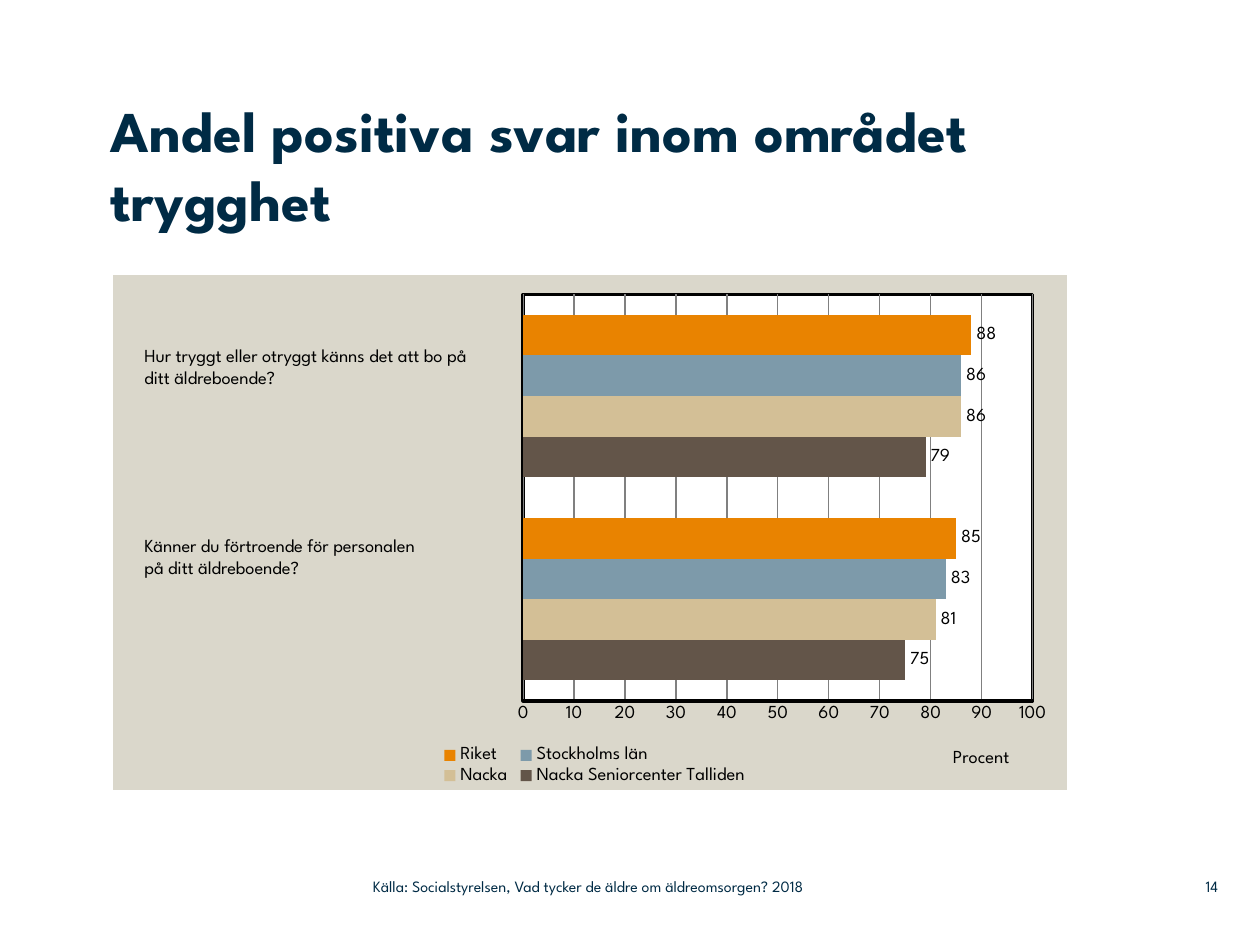
from lxml import etree
from pptx import Presentation
from pptx.chart.data import CategoryChartData
from pptx.dml.color import RGBColor
from pptx.enum.chart import XL_CHART_TYPE as ChartType
from pptx.enum.chart import XL_LABEL_POSITION as LabelPos
from pptx.enum.chart import XL_LEGEND_POSITION as LegendPos
from pptx.enum.chart import XL_TICK_MARK as TickMark
from pptx.enum.text import MSO_ANCHOR as Anchor
from pptx.enum.text import PP_ALIGN as Align
from pptx.oxml import parse_xml
from pptx.oxml.ns import nsdecls, qn
from pptx.util import Emu, Pt

FONT = "League Spartan"
COLORS = {
    "navy": "002B45", "black": "000000", "white": "FFFFFF", "panel": "DAD7CB", "grid": "808080",
    "brown": "635549", "sand": "D3BF96", "blue": "7D9AAA", "orange": "E98300",
}
SERIES = [
    ("Nacka Seniorcenter Talliden", (75, 79), "brown"),
    ("Nacka", (81, 86), "sand"),
    ("Stockholms län", (83, 86), "blue"),
    ("Riket", (85, 88), "orange"),
]


def px(length):
    return Emu(round(length * 914400 / 126))


def rgb(name):
    return RGBColor.from_string(COLORS[name])


def place(part, index, x, y, w=None, h=None, inner=False):
    for old in part.findall(qn("c:layout")):
        part.remove(old)
    layout = parse_xml(f"<c:layout {nsdecls('c')}><c:manualLayout/></c:layout>")
    settings = [("layoutTarget", "inner")] if inner else []
    settings += [("xMode", "edge"), ("yMode", "edge"), ("x", x), ("y", y)]
    settings += [(tag, size) for tag, size in (("w", w), ("h", h)) if size]
    for tag, value in settings:
        etree.SubElement(layout[0], qn(f"c:{tag}")).set("val", str(value))
    part.insert(index, layout)


def area_format(fill, line=None, width=0):
    stroke = f'<a:solidFill><a:srgbClr val="{COLORS[line]}"/></a:solidFill>' if line else "<a:noFill/>"
    return parse_xml(
        f'<c:spPr {nsdecls("c", "a")}><a:solidFill><a:srgbClr val="{COLORS[fill]}"/></a:solidFill>'
        f'<a:ln w="{Pt(width)}">{stroke}</a:ln></c:spPr>'
    )


class SlideBuilder:
    """Holds the style and the current slide, and adds each kind of element."""

    def __init__(self, slide):
        self.slide = slide

    def style(self, font, size, color="black", bold=False):
        font.name, font.size, font.bold = FONT, Pt(size), bold
        font.color.rgb = rgb(color)

    def text(self, box, lines, size, color="black", bold=False, align=Align.LEFT, anchor=Anchor.TOP, inset=True):
        frame = self.slide.shapes.add_textbox(*map(px, box)).text_frame
        frame.word_wrap = True
        frame.vertical_anchor = anchor
        if not inset:
            frame.margin_left = frame.margin_top = frame.margin_right = frame.margin_bottom = 0
        for number, line in enumerate(lines):
            paragraph = frame.add_paragraph() if number else frame.paragraphs[0]
            paragraph.alignment = align
            run = paragraph.add_run()
            run.text = line
            self.style(run.font, size, color, bold)

    def bar_chart(self, box, categories, series, unit, size):
        data = CategoryChartData()
        data.categories = categories
        for name, values, _ in series:
            data.add_series(name, values)
        chart = self.slide.shapes.add_chart(ChartType.BAR_CLUSTERED, *map(px, box), data).chart
        self.style(chart.font, size)
        chart.has_title = False

        plot = chart.plots[0]
        plot.gap_width, plot.overlap, plot.vary_by_categories = 100, 0, False
        for bars, (_, _, color) in zip(plot.series, series):
            bars.format.fill.solid()
            bars.format.fill.fore_color.rgb = rgb(color)
            labels = bars.data_labels
            labels.show_value = True
            labels.position = LabelPos.OUTSIDE_END
            self.style(labels.font, size)

        chart.category_axis.visible = False
        axis = chart.value_axis
        axis.minimum_scale, axis.maximum_scale, axis.major_unit = 0, 100, 10
        axis.major_tick_mark = axis.minor_tick_mark = TickMark.NONE
        axis.format.line.color.rgb = rgb("black")
        axis.format.line.width = Pt(2)
        grid = axis.major_gridlines.format.line
        grid.color.rgb = rgb("grid")
        grid.width = Pt(0.75)
        self.style(axis.tick_labels.font, size)
        run = axis.axis_title.text_frame.paragraphs[0].add_run()
        run.text = unit
        self.style(run.font, size)

        chart.has_legend = True
        chart.legend.position = LegendPos.BOTTOM
        chart.legend.include_in_layout = False
        self.style(chart.legend.font, size)

        root = chart.element
        plot_area = root.find(f".//{qn('c:plotArea')}")
        place(plot_area, 0, 0.43, 0.038, 0.534, 0.789, inner=True)
        place(plot_area.find(f"{qn('c:valAx')}/{qn('c:title')}"), 1, 0.877, 0.913)
        place(root.find(f".//{qn('c:legend')}"), 1, 0.34, 0.91, 0.33, 0.085)
        plot_area.append(area_format("white", "black", 2))
        root.find(qn("c:chart")).addnext(area_format("panel"))


def main():
    deck = Presentation()
    deck.slide_width, deck.slide_height = px(1260), px(945)
    builder = SlideBuilder(deck.slides.add_slide(deck.slide_layouts[6]))
    builder.bar_chart((113, 275, 954, 515), ("1", "2"), SERIES, "Procent", 10.5)
    builder.text((111, 95, 958, 179), ["Andel positiva svar inom området trygghet"], 33, "navy", bold=True, inset=False)
    builder.text((132, 338, 370, 57), ["Hur tryggt eller otryggt känns det att bo på ditt äldreboende?"], 10.5)
    builder.text((132, 528, 369, 57), ["Känner du förtroende för personalen", "på ditt äldreboende?"], 10.5)
    footer = {"size": 9, "color": "navy", "anchor": Anchor.MIDDLE, "inset": False}
    builder.text((1159, 868, 59, 37), ["14"], align=Align.RIGHT, **footer)
    builder.text((373, 868, 558, 37), ["Källa: Socialstyrelsen, Vad tycker de äldre om äldreomsorgen? 2018"], **footer)
    deck.save("out.pptx")


if __name__ == "__main__":
    main()
